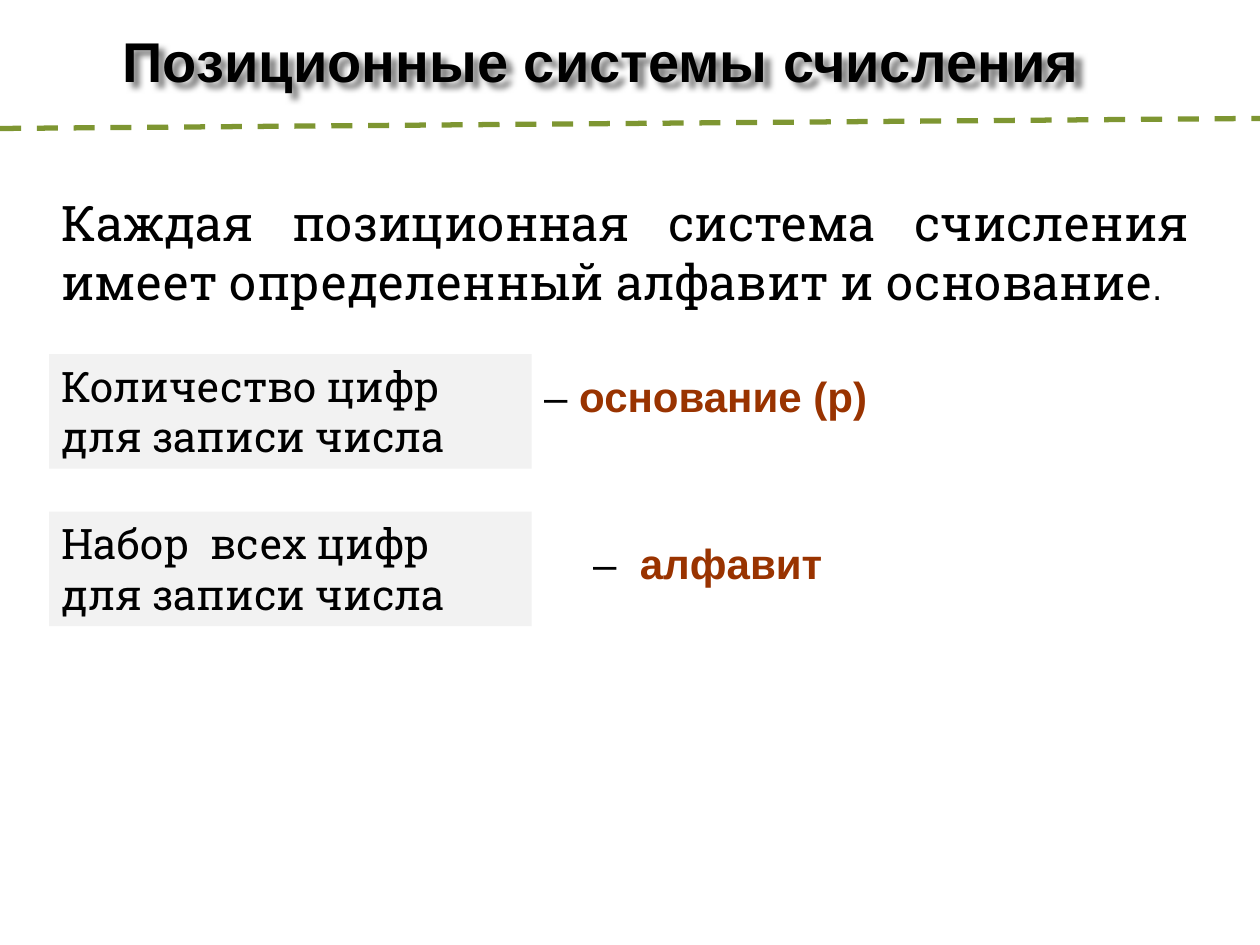
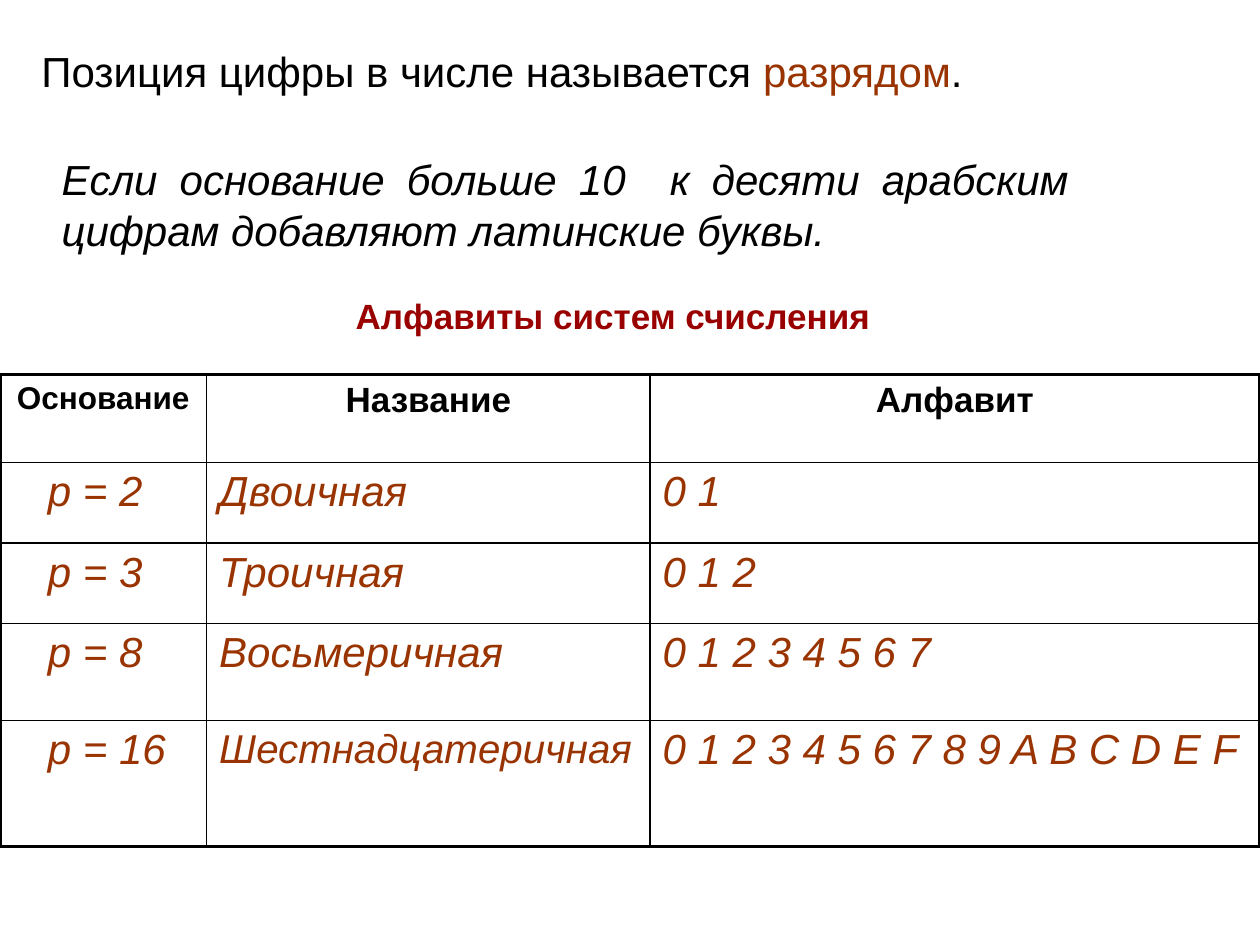
import pptx
import pptx.util
import pptx.dml.color
import pptx.enum.dml
import pptx.enum.shapes
import pptx.enum.text
import pptx.oxml
import pptx.oxml.ns
from pptx.util import Inches, Pt

BLACK, ACCENT, HEADING = "000000", "993300", "990000"
PANEL, DASHES = "F2F2F2", "7E9632"
SANS, SLAB = "Arial", "Roboto Slab"
ALIGN = pptx.enum.text.PP_ALIGN
ANCHOR = pptx.enum.text.MSO_ANCHOR
A_NS = pptx.oxml.ns.nsdecls("a")


def rgb(hex_code):
    return pptx.dml.color.RGBColor.from_string(hex_code)


def write(frame, runs, align=ALIGN.LEFT, anchor=ANCHOR.TOP):
    """Fill the first paragraph with (text, size, colour, font, bold, italic) runs."""
    frame.word_wrap = True
    frame.vertical_anchor = anchor
    paragraph = frame.paragraphs[0]
    paragraph.alignment = align
    for text, size, color, font, bold, italic in runs:
        run = paragraph.add_run()
        run.text = text
        run.font.size = Pt(size)
        run.font.color.rgb = rgb(color)
        run.font.name = font
        run.font.bold = bold
        run.font.italic = italic


deck = pptx.Presentation()
deck.slide_width, deck.slide_height = Inches(10), Inches(7.5)
title_only = deck.slide_layouts[5]

# Both slides: heading placeholder
headings = [
    ("Позиционные системы счисления", 32, BLACK, ANCHOR.TOP, (-0.23, 0.16, 10, 0.64)),
    ("Алфавиты систем счисления", 20, HEADING, ANCHOR.MIDDLE, (2.03, 2.27, 5.67, 0.47)),
]
for text, size, color, anchor, box in headings:
    title = deck.slides.add_slide(title_only).shapes.title
    title.left, title.top, title.width, title.height = map(Inches, box)
    title.text_frame.auto_size = pptx.enum.text.MSO_AUTO_SIZE.NONE
    write(title.text_frame, [(text, size, color, SANS, True, False)], ALIGN.CENTER, anchor)
definitions, alphabets = deck.slides

# Slide 1: base and alphabet
definitions.shapes.title._element.spPr.append(pptx.oxml.parse_xml(
    f'<a:effectLst {A_NS}><a:outerShdw blurRad="38100" dist="50800" dir="2700000">'
    '<a:srgbClr val="000000"><a:alpha val="50000"/></a:srgbClr>'
    '</a:outerShdw></a:effectLst>'))

divider = definitions.shapes.add_connector(
    pptx.enum.shapes.MSO_CONNECTOR.STRAIGHT,
    Inches(0), Inches(1.02), Inches(10), Inches(0.94))
divider.line.color.rgb = rgb(DASHES)
divider.line.width = Pt(3)
divider.line.dash_style = pptx.enum.dml.MSO_LINE.DASH
divider._element.spPr.append(pptx.oxml.parse_xml(f"<a:effectLst {A_NS}/>"))

for top, description in [(2.81, "Количество цифр для записи числа"),
                         (4.06, "Набор  всех цифр для записи числа")]:
    panel = definitions.shapes.add_shape(
        pptx.enum.shapes.MSO_SHAPE.RECTANGLE,
        Inches(0.39), Inches(top), Inches(3.83), Inches(0.91))
    panel.shadow.inherit = False
    panel.fill.solid()
    panel.fill.fore_color.rgb = rgb(PANEL)
    panel.line.fill.background()
    write(panel.text_frame, [(description, 24, BLACK, SLAB, False, False)])

# Both slides: statements in text boxes
statements = [
    (definitions, (0.39, 1.48, 9.14, 1.04), ALIGN.JUSTIFY, [
        ("Каждая позиционная система счисления имеет определенный алфавит и основание",
         28, BLACK, SLAB, False, False),
        (".", 20, BLACK, SANS, False, False)]),
    (definitions, (4.22, 2.89, 5.51, 0.5), ALIGN.LEFT, [
        ("– ", 24, BLACK, SANS, False, False),
        ("основание (p)", 24, ACCENT, SANS, True, False)]),
    (definitions, (4.61, 4.22, 2.05, 0.5), ALIGN.LEFT, [
        ("–  ", 24, BLACK, SANS, False, False),
        ("алфавит", 24, ACCENT, SANS, True, False)]),
    (alphabets, (0.23, 0.31, 8.51, 0.5), ALIGN.LEFT, [
        ("Позиция цифры в числе называется ", 24, BLACK, SANS, False, False),
        ("разрядом", 24, ACCENT, SANS, False, False),
        (".", 24, BLACK, SANS, False, False)]),
    (alphabets, (0.39, 1.17, 8.19, 0.91), ALIGN.JUSTIFY, [
        ("Если основание больше 10  к десяти арабским цифрам добавляют латинские буквы.",
         24, BLACK, SANS, False, True)]),
]
for slide, box, align, runs in statements:
    statement = slide.shapes.add_textbox(*map(Inches, box))
    write(statement.text_frame, runs, align)

# Slide 2: table of alphabets
systems = [
    ("Основание", "Название", "Алфавит"),
    ("р = 2", "Двоичная", "0 1"),
    ("р = 3", "Троичная", "0 1 2"),
    ("р = 8", "Восьмеричная", "0 1 2 3 4 5 6 7"),
    ("р = 16", "Шестнадцатеричная", "0 1 2 3 4 5 6 7 8 9 A B C D E F"),
]
column_widths = [1.64, 3.52, 4.84]
row_heights = [0.7, 0.64, 0.64, 0.77, 1]
special_sizes = {"Основание": 18, "Шестнадцатеричная": 23}
last_row, last_column = len(systems) - 1, len(column_widths) - 1

table = alphabets.shapes.add_table(
    len(systems), len(column_widths), Inches(0), Inches(2.97),
    Inches(sum(column_widths)), Inches(sum(row_heights))).table
table.first_row = table.horz_banding = False
for column, width in zip(table.columns, column_widths):
    column.width = Inches(width)
for row, height in zip(table.rows, row_heights):
    row.height = Inches(height)

for r, system in enumerate(systems):
    for c, text in enumerate(system):
        cell = table.cell(r, c)
        header = r == 0
        if c == 0 and not header:
            cell.margin_left = Inches(0.38)
        size = special_sizes.get(text, 20 if header else 24)
        write(cell.text_frame,
              [(text, size, BLACK if header else ACCENT, SANS, header, not header)],
              ALIGN.CENTER if header else ALIGN.LEFT)
        outer_sides = {"L": c == 0, "R": c == last_column, "T": r == 0, "B": r == last_row}
        for side, outer in outer_sides.items():
            cell._tc.get_or_add_tcPr().append(pptx.oxml.parse_xml(
                f'<a:ln{side} {A_NS} w="{Pt(2.25 if outer else 1)}"><a:solidFill>'
                f'<a:srgbClr val="{BLACK}"/></a:solidFill></a:ln{side}>'))
        cell.fill.background()

deck.save("out.pptx")
